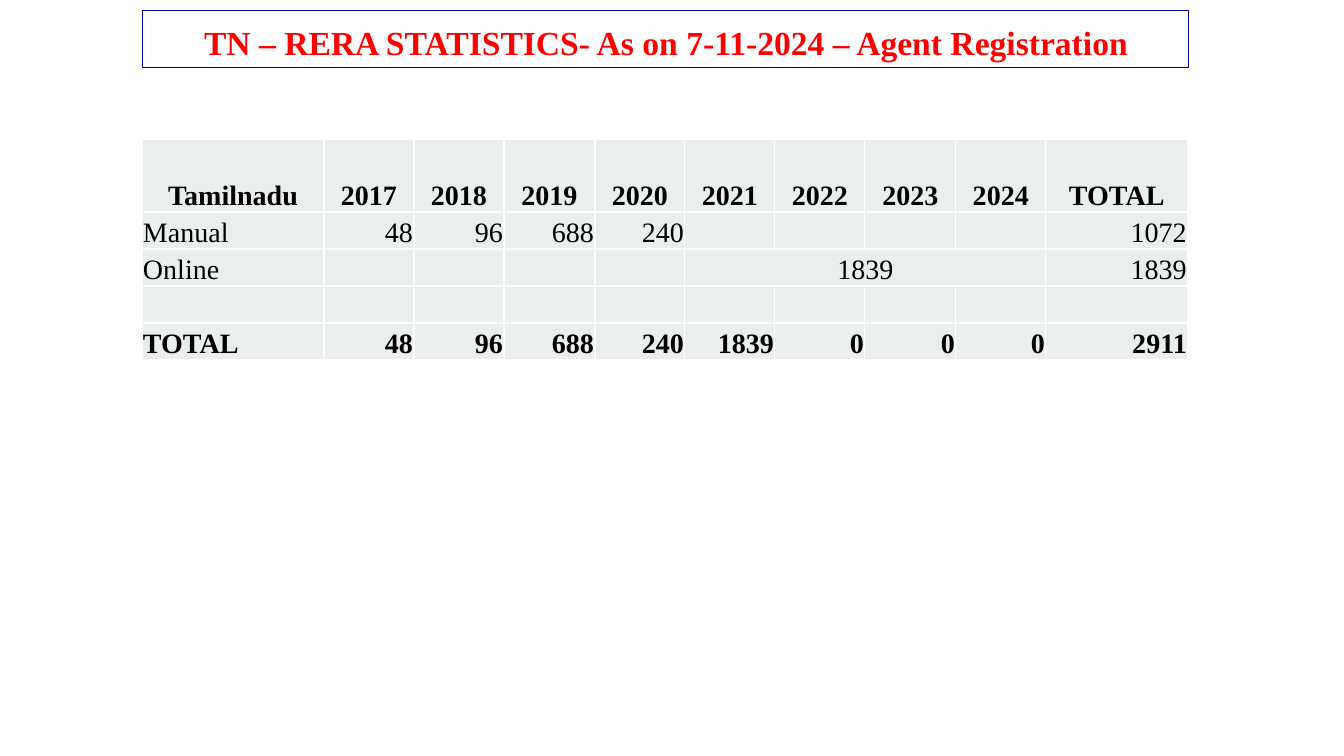
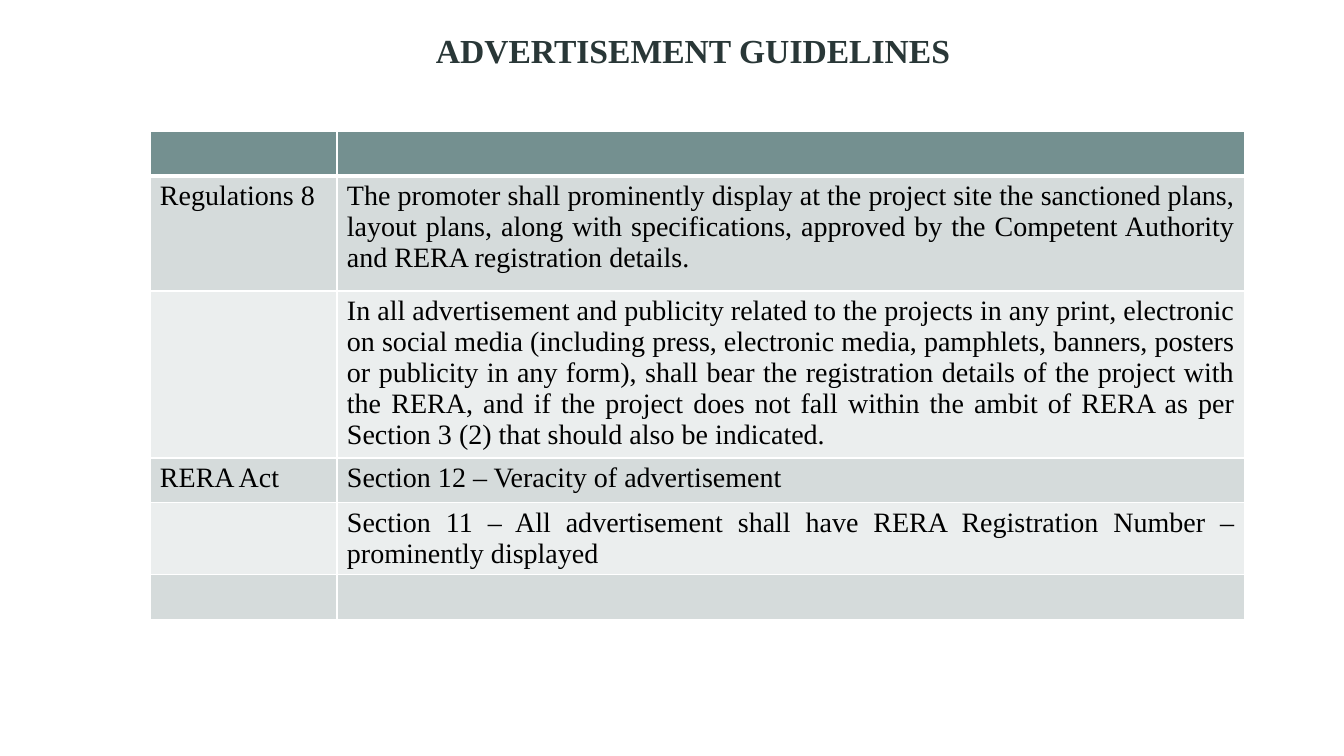
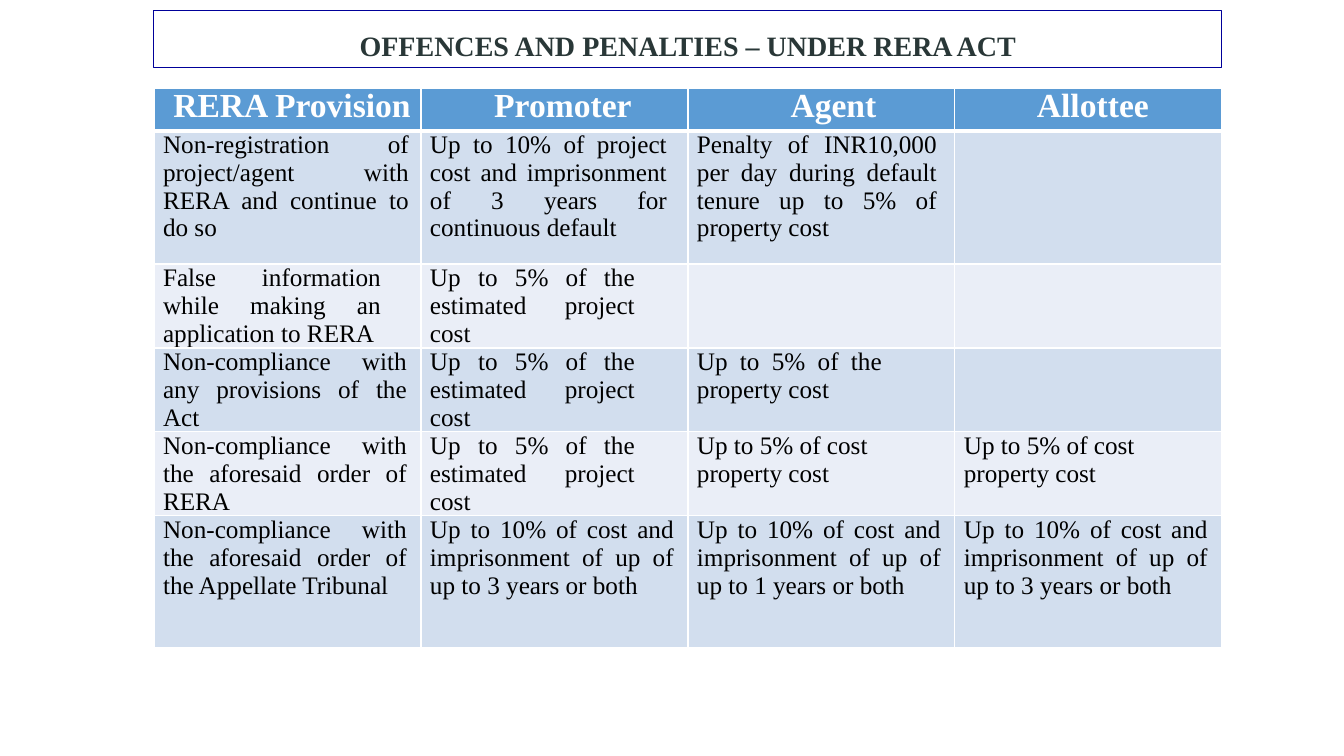
from lxml import etree
from pptx import Presentation
from pptx.dml.color import RGBColor
from pptx.enum.shapes import MSO_SHAPE
from pptx.enum.text import MSO_ANCHOR, PP_ALIGN
from pptx.oxml.ns import qn
from pptx.util import Emu, Pt

SCALE = 914400 / 100.8
FONT = "Times New Roman"
LEFT, CENTER, RIGHT, JUSTIFY = PP_ALIGN.LEFT, PP_ALIGN.CENTER, PP_ALIGN.RIGHT, PP_ALIGN.JUSTIFY
TOP, BOTTOM = MSO_ANCHOR.TOP, MSO_ANCHOR.BOTTOM
RECTANGLE = MSO_SHAPE.RECTANGLE

COLORS = {
    "white": "FFFFFF",
    "black": "000000",
    "red": "FF0000",
    "frame": "000099",
    "slate": "293737",
    "teal": "749090",
    "gray": "D5DBDB",
    "pale_gray": "EBEEEE",
    "blue": "5B9BD4",
    "light_blue": "D2DEEE",
    "pale_blue": "EAEEF7",
}

REGISTRATIONS = [
    ["Tamilnadu", "2017", "2018", "2019", "2020", "2021", "2022", "2023", "2024", "TOTAL"],
    ["Manual", "48", "96", "688", "240", "", "", "", "", "1072"],
    ["Online", "", "", "", "", "1839", "", "", "", "1839"],
    [""] * 10,
    ["TOTAL", "48", "96", "688", "240", "1839", "0", "0", "0", "2911"],
]

GUIDELINES = [
    ["", ""],
    ["Regulations 8", "The promoter shall prominently display at the project site the sanctioned plans, "
     "layout plans, along with specifications, approved by the Competent Authority and RERA "
     "registration details."],
    ["", "In all advertisement and publicity related to the projects in any print, electronic on "
     "social media (including press, electronic media, pamphlets, banners, posters or publicity in "
     "any form), shall bear the registration details of the project with the RERA, and if the "
     "project does not fall within the ambit of RERA as per Section 3 (2) that should also be "
     "indicated."],
    ["RERA Act", "Section 12 – Veracity of advertisement"],
    ["", "Section 11 – All advertisement shall have RERA Registration Number – prominently displayed"],
    ["", ""],
]

FIVE_PERCENT = "Up to 5% of the estimated project cost"
ORDER_COST = "Up to 5% of cost\nproperty cost"
PRISON = "Up to 10% of cost and imprisonment of up of up to {} years or both"
PENALTIES = [
    ["RERA Provision", "Promoter", "Agent", "Allottee"],
    ["Non-registration of project/agent with RERA and continue to do so",
     "Up to 10% of project cost and imprisonment of 3 years for continuous default",
     "Penalty of INR10,000 per day during default tenure up to 5% of property cost", ""],
    ["False information while making an application to RERA", FIVE_PERCENT, "", ""],
    ["Non-compliance with any provisions of the Act", FIVE_PERCENT,
     "Up to 5% of the property cost", ""],
    ["Non-compliance with the aforesaid order of RERA", FIVE_PERCENT, ORDER_COST, ORDER_COST],
    ["Non-compliance with the aforesaid order of the Appellate Tribunal",
     PRISON.format(3), PRISON.format(1), PRISON.format(3)],
]
HEADER_INDENTS = [9, 17, 24, 9]
RIGHT_INDENTS = [
    [0, 0, 0, 0],
    [12, 21, 18, 0],
    [40, 53, 0, 0],
    [14, 53, 73, 0],
    [14, 53, 0, 0],
    [14, 14, 14, 14],
]


def px(length):
    return Emu(round(length * SCALE))


def rgb(name):
    return RGBColor.from_string(COLORS[name])


def write_text(frame, text, size=20, color="black", bold=False, align=LEFT,
               spacing=None, indent=0, right_indent=0):
    for number, line in enumerate(text.split("\n")):
        para = frame.add_paragraph() if number else frame.paragraphs[0]
        para.alignment = align
        if spacing:
            para.line_spacing = spacing
        properties = para._p.get_or_add_pPr()
        properties.set("marL", str(px(indent)))
        properties.set("marR", str(px(right_indent)))
        properties.set("indent", "0")
        span = para.add_run()
        span.text = line
        span.font.name = FONT
        span.font.size = Pt(size)
        span.font.bold = bold
        span.font.color.rgb = rgb(color)


def add_title(page, box, text, framed=True, size=24, color="slate"):
    place = [px(length) for length in box]
    if framed:
        title = page.shapes.add_shape(RECTANGLE, *place)
        title.shadow.inherit = False
        title.fill.background()
        title.line.color.rgb = rgb("frame")
        title.line.width = Pt(0.75)
    else:
        title = page.shapes.add_textbox(*place)
    frame = title.text_frame
    frame.word_wrap = True
    frame.vertical_anchor = BOTTOM
    write_text(frame, text, size=size, color=color, bold=True, align=CENTER, spacing=0.9)


def set_borders(cell, **widths):
    properties = cell._tc.get_or_add_tcPr()
    for side in "LRTB":
        line = etree.SubElement(properties, qn(f"a:ln{side}"), w=str(Pt(widths.get(side, 1))))
        fill = etree.SubElement(line, qn("a:solidFill"))
        etree.SubElement(fill, qn("a:srgbClr"), val=COLORS["white"])


def add_grid(page, left, top, widths, heights, fills, margins, anchor=TOP, thick_header=True):
    table = page.shapes.add_table(len(heights), len(widths), px(left), px(top),
                                  px(sum(widths)), px(sum(heights))).table
    table.first_row = False
    table.horz_banding = False
    for column, width in zip(table.columns, widths):
        column.width = px(width)
    for row, height in zip(table.rows, heights):
        row.height = px(height)
    for number, row in enumerate(table.rows):
        for cell in row.cells:
            set_borders(cell, B=3 if thick_header and number == 0 else 1,
                        T=3 if thick_header and number == 1 else 1)
            cell.fill.solid()
            cell.fill.fore_color.rgb = rgb(fills[number])
            (cell.margin_left, cell.margin_top,
             cell.margin_right, cell.margin_bottom) = [px(margin) for margin in margins]
            cell.vertical_anchor = anchor
    return table


def filled_cells(table, content):
    for row, texts in enumerate(content):
        for column, text in enumerate(texts):
            if text:
                yield row, column, table.cell(row, column).text_frame, text


def registration_slide(page, left, top):
    add_title(page, (left, top, 1046, 57),
              "TN – RERA STATISTICS- As on 7-11-2024 – Agent Registration", color="red")
    table = add_grid(page, left - 1, top + 128, [182] + [90, 90, 91, 90] * 2 + [142],
                     [73] + [37] * 4, ["pale_gray"] * 5, (1, 1, 1, 0),
                     anchor=BOTTOM, thick_header=False)
    table.cell(2, 5).merge(table.cell(2, 8))
    for row, column, frame, text in filled_cells(table, REGISTRATIONS):
        if row == 0 or (row, column) == (2, 5):
            align = CENTER
        else:
            align = RIGHT if column else LEFT
        write_text(frame, text, bold=row in (0, 4), align=align)


def guidelines_slide(page, left, top):
    add_title(page, (left, top, 1086, 49), "ADVERTISEMENT GUIDELINES", framed=False)
    table = add_grid(page, left, top + 104, [187, 908], [45, 115, 167, 45, 72, 45],
                     ["teal"] + ["gray", "pale_gray"] * 2 + ["gray"], (10, 5, 10, 5))
    for row, column, frame, text in filled_cells(table, GUIDELINES):
        write_text(frame, text, align=JUSTIFY, spacing=Pt(22.1))


def penalties_slide(page, left, top):
    add_title(page, (left, top, 1068, 57), "OFFENCES AND PENALTIES – UNDER RERA ACT", size=20)
    table = add_grid(page, left, top + 77, [267] * 4, [43, 133, 84, 84, 84, 132],
                     ["blue"] + ["light_blue", "pale_blue"] * 2 + ["light_blue"], (0, 0, 0, 0))
    for row, column, frame, text in filled_cells(table, PENALTIES):
        if row == 0:
            write_text(frame, text, size=24, color="white", bold=True, align=CENTER,
                       indent=HEADER_INDENTS[column])
        else:
            write_text(frame, text, size=18, align=JUSTIFY, spacing=Pt(19.9), indent=9,
                       right_indent=RIGHT_INDENTS[row][column])


def main():
    deck = Presentation()
    deck.slide_width, deck.slide_height = px(1344), px(756)
    blank = deck.slide_layouts[6]
    for build, left, top in [(registration_slide, 143, 11), (guidelines_slide, 150, 27),
                             (penalties_slide, 154, 11)]:
        build(deck.slides.add_slide(blank), left, top)
    deck.save("out.pptx")


if __name__ == "__main__":
    main()
